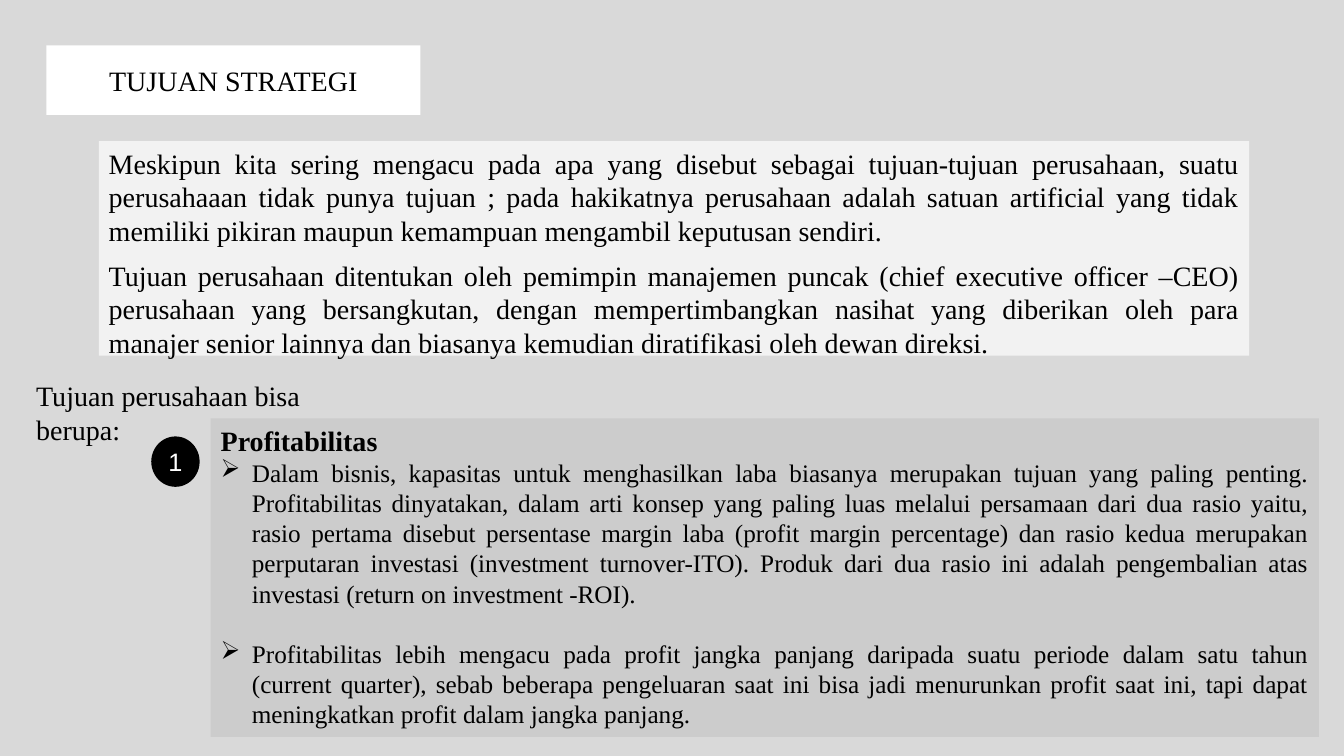
from lxml.etree import SubElement as Sub
from pptx import Presentation as Deck
from pptx.dml.color import RGBColor as RGB
from pptx.enum.shapes import MSO_SHAPE as Kind
from pptx.enum.text import MSO_ANCHOR as Anchor, MSO_AUTO_SIZE as Auto, PP_ALIGN as Align
from pptx.oxml.ns import qn
from pptx.util import Inches, Pt

GREY = RGB(0xD9, 0xD9, 0xD9)
PALE = RGB(0xF2, 0xF2, 0xF2)
MID = RGB(0xCC, 0xCC, 0xCC)
WHITE = RGB(0xFF, 0xFF, 0xFF)
BLACK = RGB(0, 0, 0)

SERIF = {"name": "Times New Roman", "size": Pt(20), "bold": False}
HEAD = {**SERIF, "bold": True}
POINT = {**SERIF, "size": Pt(18)}
DIGIT = {"name": "Arial", "size": Pt(18), "bold": False}

INTRO = [
    "Meskipun kita sering mengacu pada apa yang disebut sebagai tujuan-tujuan perusahaan, "
    "suatu perusahaaan tidak punya tujuan ; pada hakikatnya perusahaan adalah satuan "
    "artificial yang tidak memiliki pikiran maupun kemampuan mengambil keputusan sendiri.",
    "Tujuan perusahaan ditentukan oleh pemimpin manajemen puncak (chief executive officer "
    "–CEO) perusahaan yang bersangkutan, dengan mempertimbangkan nasihat yang diberikan oleh "
    "para manajer senior lainnya dan biasanya kemudian diratifikasi oleh dewan direksi.",
]
POINTS = [
    "Dalam bisnis, kapasitas untuk menghasilkan laba biasanya merupakan tujuan yang paling "
    "penting. Profitabilitas dinyatakan, dalam arti konsep yang paling luas melalui persamaan "
    "dari dua rasio yaitu, rasio pertama disebut persentase margin laba (profit margin "
    "percentage) dan rasio kedua merupakan perputaran investasi (investment turnover-ITO). "
    "Produk dari dua rasio ini adalah pengembalian atas investasi (return on investment -ROI).",
    "Profitabilitas lebih mengacu pada profit jangka panjang daripada suatu periode dalam satu "
    "tahun (current quarter), sebab beberapa pengeluaran saat ini bisa jadi menurunkan profit "
    "saat ini, tapi dapat meningkatkan profit dalam jangka panjang.",
]


def apply(item, form):
    """Set each attribute in form on item."""
    for key, value in form.items():
        setattr(item, key, value)


def place(shape, box):
    """Move and size a shape to a box in inches."""
    apply(shape, dict(zip(("left", "top", "width", "height"), map(Inches, box))))


def paint(shape, color):
    """Fill a shape and hide its outline."""
    shape.fill.solid()
    shape.fill.fore_color.rgb = color
    shape.line.fill.background()


def block(slide, kind, box, color):
    """Add a flat filled shape."""
    shape = slide.shapes.add_shape(kind, *map(Inches, box))
    shape.shadow.inherit = False
    paint(shape, color)
    return shape


def write(shape, lines, font, align, anchor=Anchor.TOP, gap=0, color=BLACK):
    """Fill a shape with paragraphs and return them."""
    frame = shape.text_frame
    apply(frame, {"text": "\n".join(lines), "word_wrap": True,
                  "auto_size": Auto.NONE, "vertical_anchor": anchor})
    for num, para in enumerate(frame.paragraphs):
        apply(para, {"alignment": align, "space_before": Pt(gap if num else 0)})
        apply(para.font, font)
        para.font.color.rgb = color
    return frame.paragraphs


def bullet(para, gap):
    """Turn a paragraph into an arrow point with a hanging indent."""
    para.space_before = Pt(gap)
    props = para._p.get_or_add_pPr()
    props.set("marL", str(Inches(0.31)))
    props.set("indent", str(-Inches(0.31)))
    mark = Sub(props, qn("a:buChar"))
    mark.set("char", "➢")
    props.insert_element_before(mark, "a:tabLst", "a:defRPr", "a:extLst")
    apply(para.font, POINT)


def banner(slide):
    """Shape the title placeholder as a white arrow tag."""
    title = slide.shapes.title
    place(title, (0.46, 0.45, 3.71, 0.69))
    Sub(title.element.spPr, qn("a:prstGeom"), prst="homePlate")
    paint(title, WHITE)
    write(title, ["TUJUAN STRATEGI"], SERIF, Align.CENTER, Anchor.MIDDLE)


def main():
    """Build and save the slide."""
    deck = Deck()
    apply(deck, {"slide_width": Inches(13.33), "slide_height": Inches(7.5)})
    slide = deck.slides.add_slide(deck.slide_layouts[5])
    back = slide.background.fill
    back.solid()
    back.fore_color.rgb = GREY

    banner(slide)
    intro = block(slide, Kind.RECTANGLE, (0.98, 1.4, 11.41, 2.13), PALE)
    write(intro, INTRO, SERIF, Align.JUSTIFY, gap=8)

    panel = block(slide, Kind.RECTANGLE, (2.09, 4.15, 10.99, 3.16), MID)
    paras = write(panel, ["Profitabilitas", *POINTS], HEAD, Align.JUSTIFY)
    for para, gap in zip(paras[1:], (0, 21.5)):
        bullet(para, gap)

    lead = slide.shapes.add_textbox(*map(Inches, (0.26, 3.71, 3.71, 0.44)))
    write(lead, ["Tujuan perusahaan bisa berupa:"], SERIF, Align.LEFT)

    badge = block(slide, Kind.OVAL, (1.5, 4.33, 0.48, 0.5), BLACK)
    write(badge, ["1"], DIGIT, Align.CENTER, Anchor.MIDDLE, color=WHITE)
    deck.save("out.pptx")


if __name__ == "__main__":
    main()
